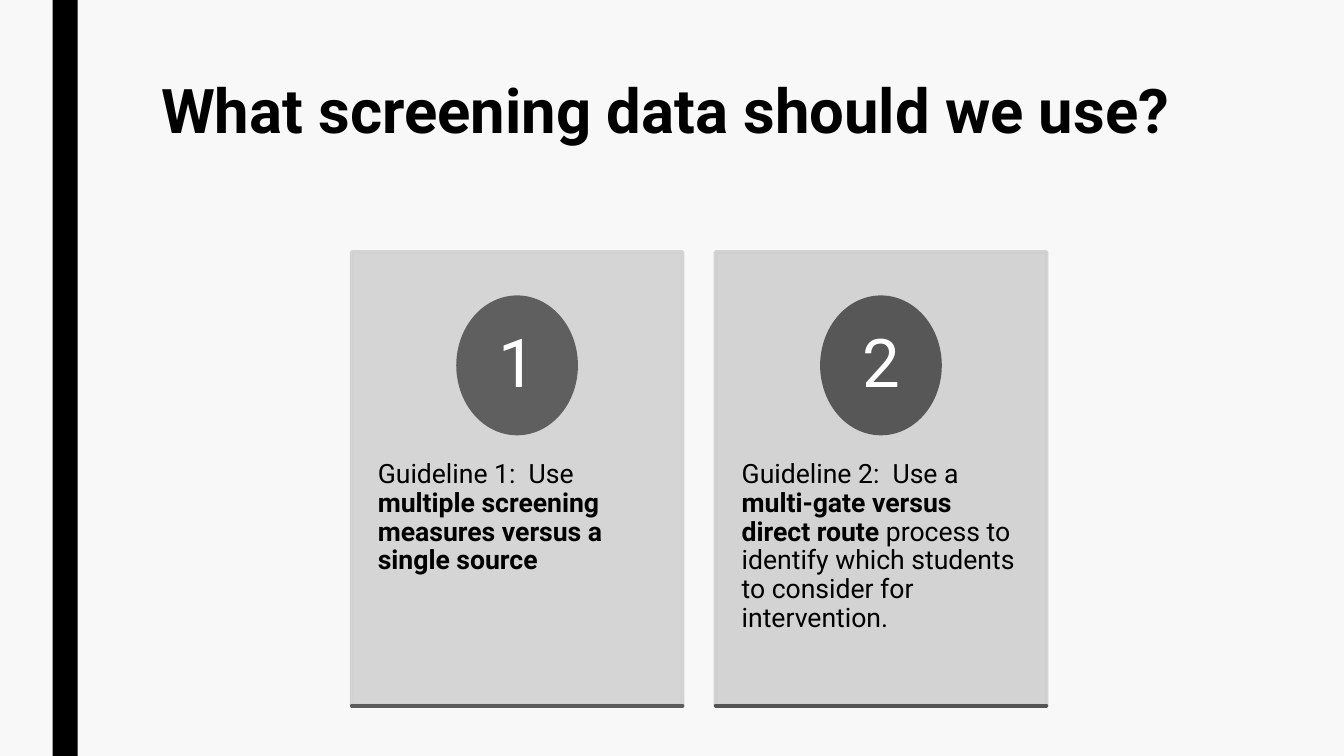
from lxml import etree
from pptx import Presentation
from pptx.dml.color import RGBColor
from pptx.enum.shapes import MSO_CONNECTOR, MSO_SHAPE
from pptx.enum.text import MSO_ANCHOR, PP_ALIGN
from pptx.oxml.ns import qn
from pptx.util import Pt

RECTANGLE, OVAL = MSO_SHAPE.RECTANGLE, MSO_SHAPE.OVAL
STRAIGHT = MSO_CONNECTOR.STRAIGHT
TOP, MIDDLE = MSO_ANCHOR.TOP, MSO_ANCHOR.MIDDLE
LEFT, CENTER = PP_ALIGN.LEFT, PP_ALIGN.CENTER

FONT = "Roboto"
SLIDE_WIDTH, SLIDE_HEIGHT = 960, 540
LINE_WIDTH = 2.75
CARD_LEFT, CARD_TOP, CARD_WIDTH, CARD_HEIGHT = 251.3, 180, 236.2, 324
CARD_STEP = 259.9
CARDS = [
    ("1", "D1D1D1", "5F5F5F", "5B5B5B",
     [("Guideline 1:  Use ", False),
      ("multiple screening measures versus a single source", True)]),
    ("2", "CFCFCF", "575757", "545454",
     [("Guideline 2:  Use a ", False),
      ("multi-gate versus direct route ", True),
      ("process to identify which students to consider for intervention.", False)]),
]


def color(value):
    return RGBColor.from_string(value)


def set_opacity(color_format_parent, percent):
    for element in color_format_parent.iter(qn("a:srgbClr")):
        alpha = etree.SubElement(element, qn("a:alpha"))
        alpha.set("val", str(percent * 1000))


def add_box(slide, kind, box, fill, outlined=True, opacity=100):
    shape = slide.shapes.add_shape(kind, *map(Pt, box))
    shape.shadow.inherit = False
    shape.fill.solid()
    shape.fill.fore_color.rgb = color(fill)
    if outlined:
        shape.line.color.rgb = color(fill)
        shape.line.width = Pt(LINE_WIDTH)
    else:
        shape.line.fill.background()
    if opacity < 100:
        set_opacity(shape.element.spPr, opacity)
    return shape


def add_text(slide, box, runs, size, text_color="000000", spacing=0.9,
             align=LEFT, anchor=TOP, insets=(7.2, 3.6)):
    shape = slide.shapes.add_textbox(*map(Pt, box))
    frame = shape.text_frame
    frame.word_wrap = True
    frame.vertical_anchor = anchor
    frame.margin_left = frame.margin_right = Pt(insets[0])
    frame.margin_top = frame.margin_bottom = Pt(insets[1])
    paragraph = frame.paragraphs[0]
    paragraph.alignment = align
    paragraph.line_spacing = spacing
    for text, bold in runs:
        run = paragraph.add_run()
        run.text = text
        run.font.name = FONT
        run.font.size = Pt(size)
        run.font.bold = bold
        run.font.color.rgb = color(text_color)


def add_rule(slide, left, top, width, line_color):
    rule = slide.shapes.add_connector(
        STRAIGHT, Pt(left), Pt(top), Pt(left + width), Pt(top))
    rule.line.color.rgb = color(line_color)
    rule.line.width = Pt(LINE_WIDTH)
    rule.line._get_or_add_ln().set("cap", "rnd")
    etree.SubElement(rule.element.spPr, qn("a:effectLst"))


def add_header(slide, box):
    add_text(slide, box, [("What screening data should we use?", True)],
             44, spacing=0.89)


def add_card(slide, box, number, fill, badge_fill, rule_color, runs):
    left, top, width, height = box
    badge_width, badge_height = 84.2, 97.2
    number_width, number_height = 59.6, 68.8
    center = left + width / 2
    badge_top = top + 32.4
    number_top = badge_top + (badge_height - number_height) / 2
    add_box(slide, RECTANGLE, box, fill, opacity=89)
    add_text(slide, (left, top + 123.1, width, 194.4), runs, 19,
             insets=(18.6, 25.9))
    add_box(slide, OVAL,
            (center - badge_width / 2, badge_top, badge_width, badge_height),
            badge_fill)
    add_text(slide,
             (center - number_width / 2, number_top, number_width, number_height),
             [(number, False)], 48, text_color="FFFFFF", align=CENTER,
             anchor=MIDDLE, insets=(6.5, 0.9))
    add_rule(slide, left, top + height, width, rule_color)


def main():
    presentation = Presentation()
    presentation.slide_width = Pt(SLIDE_WIDTH)
    presentation.slide_height = Pt(SLIDE_HEIGHT)
    slide = presentation.slides.add_slide(presentation.slide_layouts[6])
    slide.background.fill.solid()
    slide.background.fill.fore_color.rgb = color("F8F8F8")
    add_box(slide, RECTANGLE, (37.5, 0, 18, SLIDE_HEIGHT), "000000",
            outlined=False)
    add_header(slide, (108, 54, 756, 116.6))
    for index, card in enumerate(CARDS):
        left = CARD_LEFT + index * CARD_STEP
        add_card(slide, (left, CARD_TOP, CARD_WIDTH, CARD_HEIGHT), *card)
    presentation.save("out.pptx")


if __name__ == "__main__":
    main()
